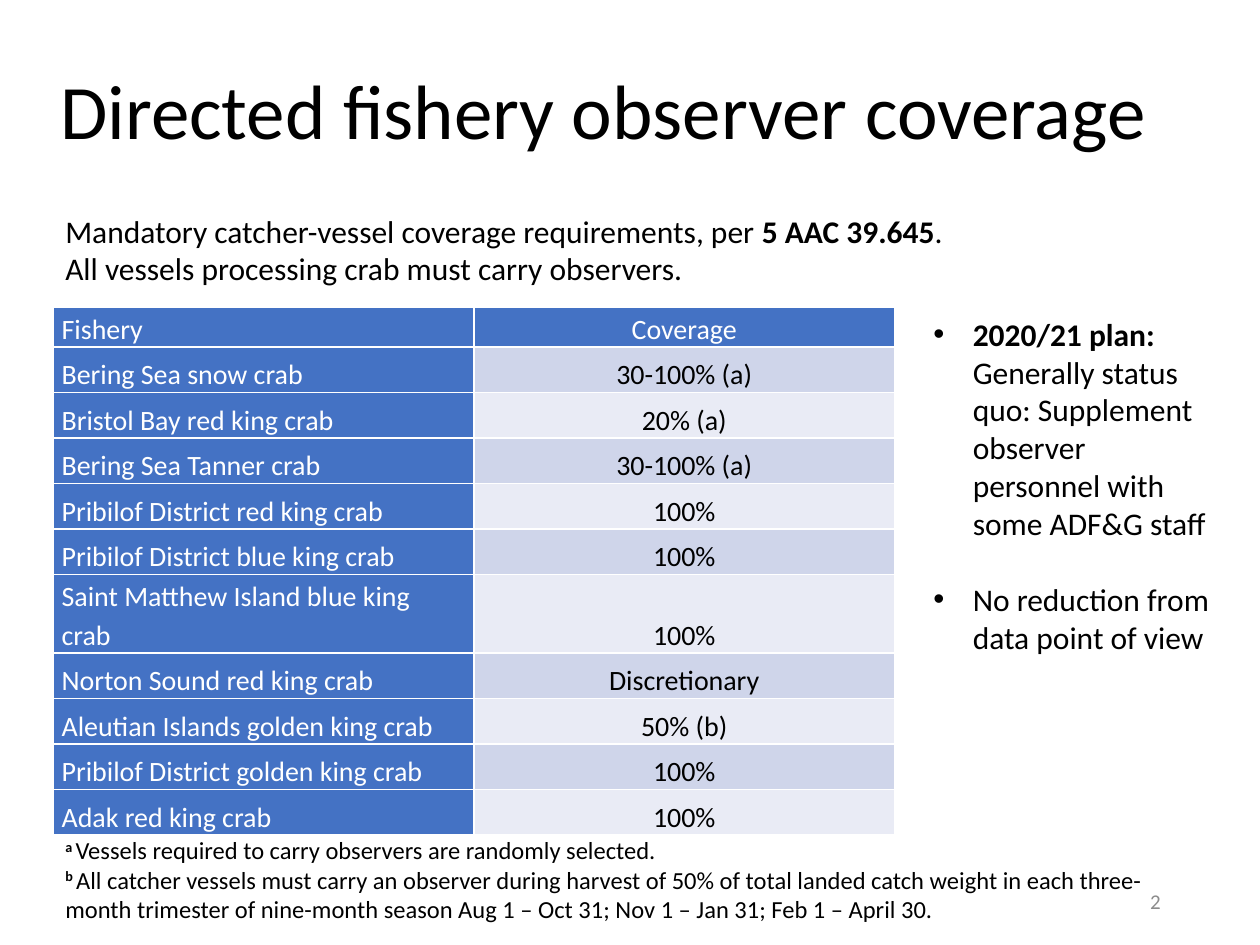
import pptx
import pptx.dml.color
import pptx.enum.text
import pptx.oxml
import pptx.oxml.ns
import pptx.util

Pt = pptx.util.Pt
RGBColor = pptx.dml.color.RGBColor
ALIGN = pptx.enum.text.PP_ALIGN
ANCHOR = pptx.enum.text.MSO_ANCHOR

FONT = "Calibri"
BLACK = RGBColor(0x00, 0x00, 0x00)
WHITE = RGBColor(0xFF, 0xFF, 0xFF)
GRAY = RGBColor(0x8C, 0x8C, 0x8C)
BLUE = RGBColor(0x44, 0x72, 0xC4)
BAND_DARK = RGBColor(0xCF, 0xD5, 0xEA)
BAND_LIGHT = RGBColor(0xE9, 0xEB, 0xF5)


def add_span(para, text, size, color=BLACK, bold=False):
    span = para.add_run()
    span.text = text
    span.font.name = FONT
    span.font.size = Pt(size)
    span.font.color.rgb = color
    span.font.bold = bold
    return span


def add_text(slide, left, top, width, height, size, paragraphs, color=BLACK, anchor=ANCHOR.TOP):
    """Add a text box; each paragraph is a list of (text, bold) spans."""
    box = slide.shapes.add_textbox(Pt(left), Pt(top), Pt(width), Pt(height))
    frame = box.text_frame
    frame.word_wrap = True
    frame.vertical_anchor = anchor
    for index, spans in enumerate(paragraphs):
        para = frame.add_paragraph() if index else frame.paragraphs[0]
        for text, bold in spans:
            add_span(para, text, size, color, bold)
    return frame.paragraphs


deck = pptx.Presentation()
deck.slide_width, deck.slide_height = Pt(720), Pt(540)
slide = deck.slides.add_slide(deck.slide_layouts[6])

# Coverage table
coverage = [
    ("Fishery", "Coverage"),
    ("Bering Sea snow crab", "30-100% (a)"),
    ("Bristol Bay red king crab", "20% (a)"),
    ("Bering Sea Tanner crab", "30-100% (a)"),
    ("Pribilof District red king crab", "100%"),
    ("Pribilof District blue king crab", "100%"),
    ("Saint Matthew Island blue king crab", "100%"),
    ("Norton Sound red king crab", "Discretionary"),
    ("Aleutian Islands golden king crab", "50% (b)"),
    ("Pribilof District golden king crab", "100%"),
    ("Adak red king crab", "100%"),
]
table = slide.shapes.add_table(
    len(coverage), 2, Pt(30.24), Pt(175.7), Pt(481), Pt(276.5)
).table
for column in table.columns:
    column.width = Pt(240.5)

for row_index, texts in enumerate(coverage):
    table.rows[row_index].height = Pt(26 if row_index else 17.3)
    for column_index, text in enumerate(texts):
        cell = table.cell(row_index, column_index)
        cell.margin_left = cell.margin_right = Pt(5)
        cell.margin_top = cell.margin_bottom = 0
        cell.vertical_anchor = ANCHOR.BOTTOM

        # White borders come before the fill in the cell properties
        properties = cell._tc.get_or_add_tcPr()
        for side in ("lnL", "lnR", "lnT", "lnB"):
            properties.append(pptx.oxml.parse_xml(
                f'<a:{side} {pptx.oxml.ns.nsdecls("a")} w="12700">'
                f'<a:solidFill><a:srgbClr val="{WHITE}"/></a:solidFill></a:{side}>'
            ))
        is_heading = row_index == 0 or column_index == 0
        band = BAND_DARK if row_index % 2 else BAND_LIGHT
        cell.fill.solid()
        cell.fill.fore_color.rgb = BLUE if is_heading else band

        para = cell.text_frame.paragraphs[0]
        para.line_spacing = 1.15
        para.alignment = ALIGN.CENTER if column_index else ALIGN.LEFT
        add_span(para, text, 16, WHITE if is_heading else BLACK)

# Introduction
add_text(slide, 30.24, 117.4, 648, 51, 18, [
    [("Mandatory catcher-vessel coverage requirements, per ", False),
     ("5 AAC 39.645", True), (".", False)],
    [("All vessels processing crab must carry observers.", False)],
])

# Footnotes with superscript markers
footnotes = add_text(slide, 30.24, 473.8, 648, 58.3, 14, [
    [("a ", True), ("Vessels required to carry observers are randomly selected.", False)],
    [("b ", True),
     ("All catcher vessels must carry an observer during harvest of 50% of total landed "
      "catch weight in each three-month trimester of nine-month season "
      "Aug 1 – Oct 31; Nov 1 – Jan 31; Feb 1 – April 30.", False)],
])
for para in footnotes:
    para.runs[0].font._element.set("baseline", "30000")

# Title
title = add_text(slide, 27.4, 13, 692.6, 104.4, 44,
                 [[("Directed fishery observer coverage", False)]], anchor=ANCHOR.MIDDLE)
title[0].line_spacing = 0.9

# Slide number
number = add_text(slide, 508.3, 500.4, 162, 28.8, 12, [[("2", False)]], GRAY, ANCHOR.MIDDLE)
number[0].alignment = ALIGN.RIGHT

# Plan bullets
bullets = add_text(slide, 526.3, 176.4, 177.1, 203.8, 18, [
    [("2020/21 plan:", True),
     (" Generally status quo: Supplement observer personnel with some ADF&G staff", False)],
    [("No reduction from data point of view", False)],
])
bullets[1].space_before = Pt(22)
for para in bullets:
    properties = para._p.get_or_add_pPr()
    properties.set("marL", str(Pt(22.5)))
    properties.set("indent", str(-Pt(22.5)))
    for xml in ('<a:buFont {} typeface="Arial"/>', '<a:buChar {} char="•"/>'):
        properties.append(pptx.oxml.parse_xml(xml.format(pptx.oxml.ns.nsdecls("a"))))

deck.save("out.pptx")
